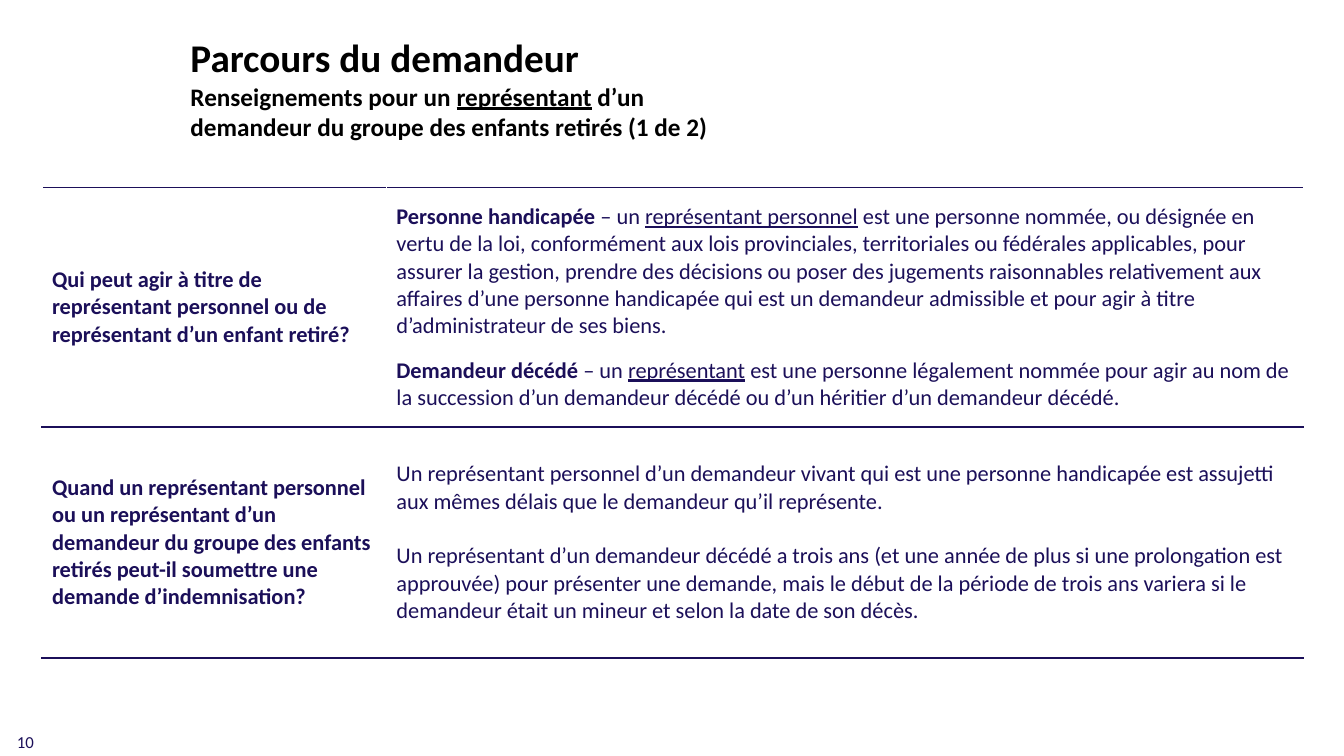
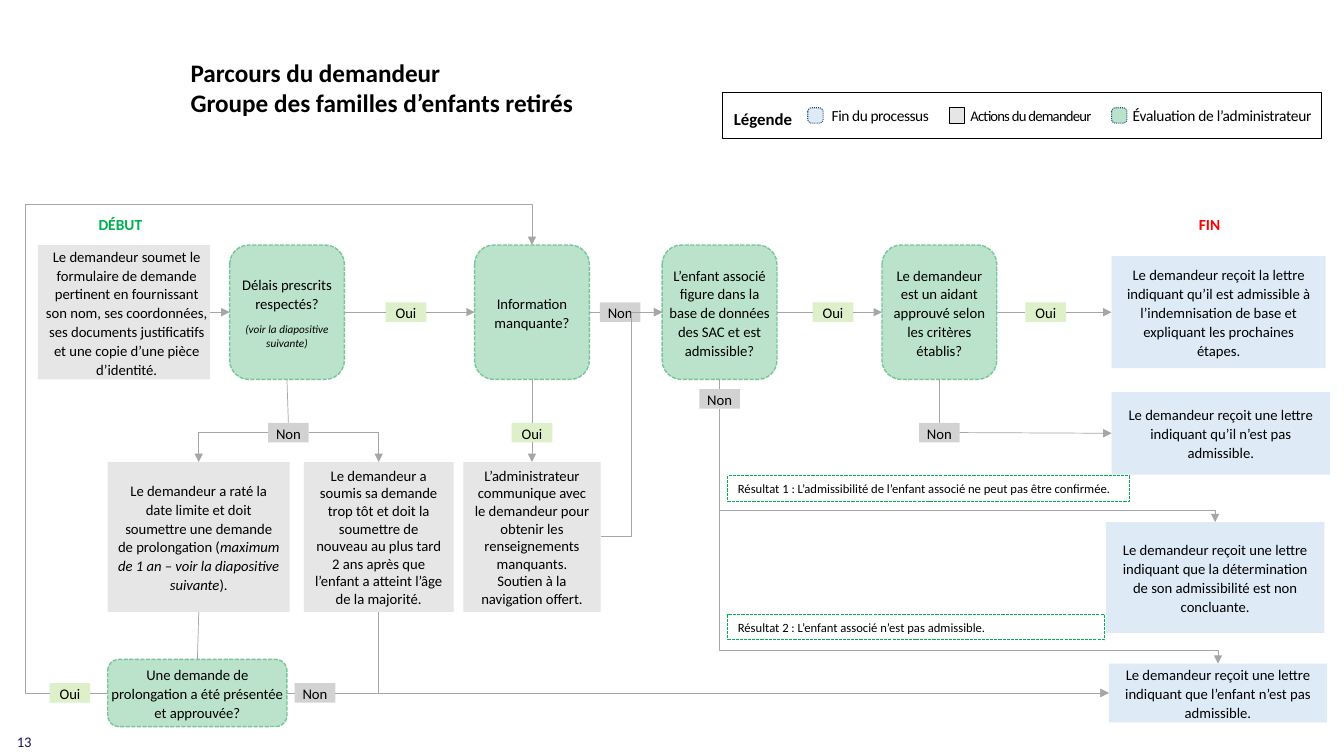
from dataclasses import dataclass

from lxml.etree import SubElement
from pptx import Presentation
from pptx.dml.color import RGBColor
from pptx.enum.dml import MSO_LINE as DASH
from pptx.enum.shapes import MSO_CONNECTOR as CXN, MSO_SHAPE as SHAPE
from pptx.enum.text import MSO_ANCHOR as ANCHOR, PP_ALIGN as ALIGN
from pptx.oxml.ns import qn
from pptx.util import Pt


@dataclass(frozen=True)
class Theme:
    font: str = "Calibri"
    black: str = "000000"
    white: str = "FFFFFF"
    navy: str = "1B0F59"
    action: str = "E7E6E6"
    final: str = "DEEBF7"
    review: str = "78C697"
    yes: str = "BCE395"
    no: str = "A6A6A6"
    wire: str = "A6A6A6"
    swatch_edge: str = "1F4E79"
    green: str = "00B050"
    red: str = "FF0000"
    title: float = 28
    subtitle: float = 18
    table: float = 16
    number: float = 12
    legend: float = 11
    node: float = 10.5
    result: float = 9
    hint: float = 8


T = Theme()
TOP, LEFT, BOTTOM, RIGHT = range(4)


def rgb(color):
    return RGBColor.from_string(color)


def write(tf, paras, size, color=T.black, align=ALIGN.LEFT, spacing=None,
          gap=0, inset=None, spc=0):
    tf.word_wrap = True
    tf.vertical_anchor = ANCHOR.MIDDLE
    if inset is not None:
        tf.margin_left = tf.margin_right = Pt(inset)
        tf.margin_top = tf.margin_bottom = Pt(inset)
    for i, runs in enumerate(paras):
        p = tf.paragraphs[0] if i == 0 else tf.add_paragraph()
        p.alignment = align
        if spacing:
            p.line_spacing = spacing
        if i:
            p.space_before = Pt(gap)
        for text, flags, *own_size in runs:
            r = p.add_run()
            r.text = text
            f = r.font
            f.name, f.size = T.font, Pt(own_size[0] if own_size else size)
            f.color.rgb = rgb(color)
            f.bold, f.italic, f.underline = (k in flags for k in "biu")
            if spc:
                r._r.get_or_add_rPr().set("spc", str(round(spc * 100)))


def add_text(shapes, box, paras, size, **style):
    sp = shapes.add_textbox(*map(Pt, box))
    write(sp.text_frame, paras, size, **style)


def add_box(shapes, box, fill=None, kind=SHAPE.RECTANGLE, alpha=None,
            line=None, width=1, dash=None):
    sp = shapes.add_shape(kind, *map(Pt, box))
    sp.shadow.inherit = False
    if fill:
        sp.fill.solid()
        sp.fill.fore_color.rgb = rgb(fill)
        if alpha:
            clr = sp._element.spPr.find(qn("a:solidFill"))[0]
            SubElement(clr, qn("a:alpha")).set("val", str(alpha * 1000))
    else:
        sp.fill.background()
    if line:
        sp.line.color.rgb = rgb(line)
        sp.line.width = Pt(width)
        if dash:
            sp.line.dash_style = dash
    else:
        sp.line.fill.background()
    return sp


def link(shapes, start, end, arrow=False, bend=None, adj=(), down=False):
    c = shapes.add_connector(CXN.ELBOW if bend else CXN.STRAIGHT, 0, 0, 0, 0)
    c.begin_connect(*start)
    c.end_connect(*end)
    c.line.color.rgb = rgb(T.wire)
    c.line.width = Pt(0.5)
    pr = c._element.spPr
    if arrow:
        SubElement(pr.find(qn("a:ln")), qn("a:tailEnd")).set("type", "triangle")
    SubElement(pr, qn("a:effectLst"))
    if bend:
        geom = pr.find(qn("a:prstGeom"))
        geom.set("prst", f"bentConnector{bend}")
        av = geom.find(qn("a:avLst"))
        if av is None:
            av = SubElement(geom, qn("a:avLst"))
        for i, share in enumerate(adj, 1):
            gd = SubElement(av, qn("a:gd"))
            gd.set("name", f"adj{i}")
            gd.set("fmla", f"val {round(share * 100000)}")
    if down:
        x, y, w, h = c.left, c.top, c.width, c.height
        c.left, c.top = x + (w - h) // 2, y + (h - w) // 2
        c.width, c.height = h, w
        xfrm = pr.find(qn("a:xfrm"))
        xfrm.set("rot", "16200000")
        xfrm.set("flipH", "1")


def add_page(prs, number, size, title_box, title):
    s = prs.slides.add_slide(prs.slide_layouts[6])
    add_text(s.shapes, title_box, title, T.subtitle)
    add_text(s.shapes, (5, 518, 216, 23), [[(number, "")]], size, color=T.navy)
    return s


def add_questions(s, box, rows, cols, heights):
    table = s.shapes.add_table(len(rows), len(cols), *map(Pt, box)).table
    table.first_row = table.horz_banding = False
    for col, w in zip(table.columns, cols):
        col.width = Pt(w)
    for row, h, (question, answer, gap) in zip(table.rows, heights, rows):
        row.height = Pt(h)
        for cell, paras in zip(row.cells, ([[(question, "b")]], answer)):
            write(cell.text_frame, paras, T.table, color=T.navy, gap=gap)
            cell.vertical_anchor = ANCHOR.MIDDLE
            tc = cell._tc.get_or_add_tcPr()
            for side, color in zip("LRTB", (T.white, T.white, T.navy, T.navy)):
                ln = SubElement(tc, qn(f"a:ln{side}"))
                ln.set("w", str(Pt(1)))
                fill = SubElement(ln, qn("a:solidFill"))
                SubElement(fill, qn("a:srgbClr")).set("val", color)
            cell.fill.background()


def add_legend(s, box):
    x, y, w, h = box
    shapes = s.shapes.add_group_shape().shapes
    add_box(shapes, box, T.white, line=T.black)
    add_text(shapes, (x, y + 8, 58, 21), [[("Légende", "b")]], 12,
             align=ALIGN.CENTER, inset=0)
    edge = dict(line=T.swatch_edge, width=0.75, dash=DASH.ROUND_DOT,
                kind=SHAPE.ROUNDED_RECTANGLE)
    items = (
        (61, 10, 100, "Fin du processus", T.legend, -0.3,
         dict(fill=T.final, **edge)),
        (162, 8, 110, "Actions du demandeur", T.node, -0.5,
         dict(fill=T.action, line=T.black, width=0.5)),
        (278, 8, 155, "Évaluation de l’administrateur", T.legend, -0.2,
         dict(fill=T.review, alpha=50, **edge)),
    )
    for dx, gap, tw, text, size, spc, look in items:
        sp = add_box(shapes, (x + dx, y + 11, 11, 11), **look)
        if len(sp.adjustments):
            sp.adjustments[0] = 0.25
        add_text(shapes, (x + dx + gap, y + 6, tw, 21), [[(text, "")]],
                 size, spc=spc)


def add_flow(s, box):
    x0, y0 = box[:2]
    shapes = s.shapes

    def node(x, y, w, h, runs, fill, inset=None, spacing=1.07, **look):
        sp = add_box(shapes, (x0 + x, y0 + y, w, h), fill, **look)
        paras = [runs] if isinstance(runs, list) else [[(runs, "")]]
        if isinstance(runs, tuple):
            paras = list(runs)
        write(sp.text_frame, paras, T.node, align=ALIGN.CENTER,
              spacing=spacing, gap=6.4, inset=inset)
        return sp

    def review(x, text, y=35, w=82, h=96):
        return node(x, y, w, h, text, T.review, 0, alpha=50, line=T.review,
                    kind=SHAPE.ROUNDED_RECTANGLE, dash=DASH.SQUARE_DOT)

    def answer(cx, cy, text):
        return node(cx - 14.5, cy - 7, 29, 14, text,
                    T.yes if text == "Oui" else T.no, 0, alpha=50)

    def wire(a, a_side, b, b_side, **how):
        link(shapes, (a, a_side), (b, b_side), **how)

    row, branch, base = 83, 169, 355
    start = node(27, 35, 123, 96, "Le demandeur soumet le formulaire de demande pertinent en fournissant son nom, ses coordonnées, ses documents justificatifs et une copie d’une pièce d’identité.", T.action, 0)
    start.text_frame.margin_left = Pt(4)
    deadline = review(164, ([("Délais prescrits respectés?", "")],
                            [("(voir la diapositive suivante)", "i", T.hint)]))
    missing = review(339, "Information manquante?")
    child = review(473, "L’enfant associé figure dans la base de données des SAC et est admissible?")
    carer = review(630, "Le demandeur est un aidant approuvé selon les critères établis?")
    extension = review(77, "Une demande de prolongation a été présentée et approuvée?", 331, 128, 48)

    late = node(77, 190, 130, 107, [
        ("Le demandeur a raté la date limite et doit soumettre une demande de prolongation (", ""),
        ("maximum de 1 an – voir la diapositive suivante", "i"), (").", "")], T.action)
    early = node(217, 190, 107, 107, "Le demandeur a soumis sa demande trop tôt et doit la soumettre de nouveau au plus tard 2 ans après que l’enfant a atteint l’âge de la majorité.", T.action, spacing=None)
    contact = node(331, 190, 98, 107, "L’administrateur communique avec le demandeur pour obtenir les renseignements manquants. Soutien à la navigation offert.", T.action, spacing=None)

    accepted = node(794, 43, 153, 80, "Le demandeur reçoit la lettre indiquant qu’il est admissible à l’indemnisation de base et expliquant les prochaines étapes.", T.final)
    refused = node(794, 140, 156, 59, "Le demandeur reçoit une lettre indiquant qu’il n’est pas admissible.", T.final)
    unclear = node(790, 233, 156, 79, "Le demandeur reçoit une lettre indiquant que la détermination de son admissibilité est non concluante.", T.final)
    child_refused = node(792, 334, 156, 42, "Le demandeur reçoit une lettre indiquant que l’enfant n’est pas admissible.", T.final)

    on_time = answer(290, row, "Oui")
    complete = answer(443, row, "Non")
    child_yes = answer(595, row, "Oui")
    carer_yes = answer(747, row, "Oui")
    off_time = answer(206, branch, "Non")
    incomplete = answer(380, branch, "Oui")
    carer_no = answer(671, branch, "Non")
    child_no = answer(514, 145, "Non")
    extension_no = answer(225, base, "Non")
    extension_yes = answer(50, base, "Oui")

    wire(start, RIGHT, deadline, LEFT, arrow=True)
    for a, mark, b in ((deadline, on_time, missing), (missing, complete, child),
                       (child, child_yes, carer), (carer, carer_yes, accepted),
                       (extension, extension_no, child_refused)):
        wire(a, RIGHT, mark, LEFT)
        wire(mark, RIGHT, b, LEFT, arrow=True)
    for a, mark in ((deadline, off_time), (missing, incomplete),
                    (child, child_no), (carer, carer_no), (late, extension)):
        wire(a, BOTTOM, mark, TOP)
    wire(extension_yes, RIGHT, extension, LEFT)
    wire(incomplete, BOTTOM, contact, TOP, arrow=True)
    wire(carer_no, RIGHT, refused, LEFT, arrow=True)
    wire(off_time, LEFT, late, TOP, arrow=True, bend=2)
    wire(off_time, RIGHT, early, TOP, arrow=True, bend=2)
    wire(early, BOTTOM, child_refused, LEFT, arrow=True, bend=2, down=True)
    wire(contact, RIGHT, child, LEFT, arrow=True, bend=3, adj=(0.5,))
    wire(child_no, BOTTOM, unclear, TOP, arrow=True, bend=3, adj=(0.9,), down=True)
    wire(child_no, BOTTOM, child_refused, TOP, arrow=True, bend=3, adj=(0.95,), down=True)
    wire(extension_yes, LEFT, missing, TOP, arrow=True, bend=4, adj=(-0.05, 1.09))

    for x, text, color in ((43, "DÉBUT", T.green), (821, "FIN", T.red)):
        add_text(shapes, (x0 + x, y0 + 10, 86, 21), [[(text, "b")]], T.legend,
                 color=color, align=ALIGN.CENTER)
    for y, w, text in (
            (200, 287, "Résultat 1 : L’admissibilité de l’enfant associé ne peut pas être confirmée."),
            (299, 269, "Résultat 2 : L’enfant associé n’est pas admissible.")):
        sp = add_box(shapes, (x0 + 520, y0 + y, w, 18), line=T.green,
                     width=0.75, dash=DASH.SQUARE_DOT)
        write(sp.text_frame, [[(text, "")]], T.result)


def main():
    prs = Presentation()
    prs.slide_width, prs.slide_height = Pt(960), Pt(540)

    s = add_page(prs, "10", T.number, (129, 20, 393, 85), [
        [("Parcours du demandeur", "b", T.title)],
        [("Renseignements pour un ", "b"), ("représentant", "bu"),
         (" d’un demandeur du groupe des enfants retirés (1 de 2)", "b")]])
    add_questions(s, (30, 134, 901, 336), (
        ("Qui peut agir à titre de représentant personnel ou de représentant d’un enfant retiré?",
         [[("Personne handicapée ", "b"), ("– un ", ""), ("représentant personnel", "u"),
           (" est une personne nommée, ou désignée en vertu de la loi, conformément aux lois provinciales, territoriales ou fédérales applicables, pour assurer la gestion, prendre des décisions ou poser des jugements raisonnables relativement aux affaires d’une personne handicapée qui est un demandeur admissible et pour agir à titre d’administrateur de ses biens.", "")],
          [("Demandeur décédé ", "b"), ("– un ", ""), ("représentant", "u"),
           (" est une personne légalement nommée pour agir au nom de la succession d’un demandeur décédé ou d’un héritier d’un demandeur décédé.", "")]], 12),
        ("Quand un représentant personnel ou un représentant d’un demandeur du groupe des enfants retirés peut-il soumettre une demande d’indemnisation?",
         [[("Un représentant personnel d’un demandeur vivant qui est une personne handicapée est assujetti aux mêmes délais que le demandeur qu’il représente.", "")],
          [("Un représentant d’un demandeur décédé a trois ans (et une année de plus si une prolongation est approuvée) pour présenter une demande, mais le début de la période de trois ans variera si le demandeur était un mineur et selon la date de son décès.", "")]], 19.5),
    ), (246, 655), (171, 165))

    s = add_page(prs, "13", T.node, (129, 37, 334, 51), [
        [("Parcours du demandeur", "b")],
        [("Groupe des familles d’enfants retirés", "b")]])
    add_legend(s, (516, 66, 428, 33))
    add_flow(s, (0, 140, 960, 400))

    prs.save("out.pptx")


if __name__ == "__main__":
    main()
